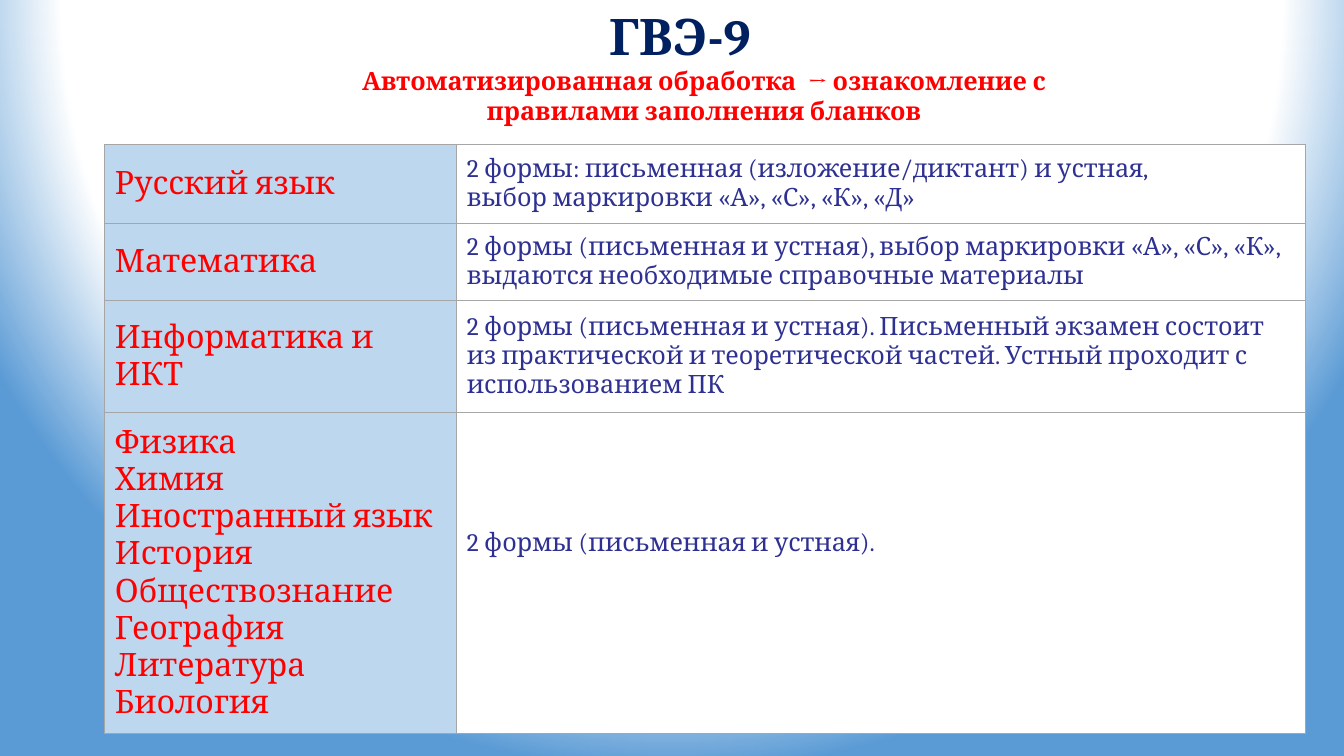
from dataclasses import dataclass

from lxml import etree
from pptx import Presentation
from pptx import util as u
from pptx.dml.color import RGBColor
from pptx.enum import text
from pptx.oxml import parse_xml
from pptx.oxml.ns import qn

NS = 'xmlns:a="http://schemas.openxmlformats.org/drawingml/2006/main"'


@dataclass(frozen=True)
class Theme:
    font: str = "Cambria"
    navy: str = "002060"
    red: str = "FF0000"
    indigo: str = "2E3192"
    pale_blue: str = "BDD7EE"
    white: str = "FFFFFF"
    sky: str = "5B9BD5"
    border: str = "A6A6A6"
    title_size: int = 36
    subject_size: int = 23
    body_size: int = 18


theme = Theme()


def write(frame, lines, size, color, bold=False, align=text.PP_ALIGN.LEFT):
    frame.word_wrap = True
    frame.text = "\n".join(lines)
    for para in frame.paragraphs:
        para.alignment = align
        for span in para.runs:
            span.font.name = theme.font
            span.font.size = u.Pt(size)
            span.font.bold = bold
            span.font.color.rgb = RGBColor.from_string(color)


def add_borders(cell):
    properties = cell._tc.get_or_add_tcPr()
    for side in ("lnL", "lnR", "lnT", "lnB"):
        properties.append(parse_xml(
            f'<a:{side} {NS} w="12700"><a:solidFill>'
            f'<a:srgbClr val="{theme.border}"/></a:solidFill></a:{side}>'))


deck = Presentation()
deck.slide_width, deck.slide_height = u.Inches(13.33), u.Inches(7.5)
page = deck.slides.add_slide(deck.slide_layouts[6])

# Background: white glow fading to blue at the edges
page.background.fill.solid()
solid = next(page.element.iter(qn("p:bgPr"))).find(qn("a:solidFill"))
gradient = etree.Element(qn("a:gradFill"), rotWithShape="1")
stops = etree.SubElement(gradient, qn("a:gsLst"))
for percent, color in ((0, theme.white), (79, theme.white), (100, theme.sky)):
    stop = etree.SubElement(stops, qn("a:gs"), pos=str(percent * 1000))
    etree.SubElement(stop, qn("a:srgbClr"), val=color)
circle = etree.SubElement(gradient, qn("a:path"), {"path": "circle"})
etree.SubElement(circle, qn("a:fillToRect"),
                 l="50000", t="-80000", r="50000", b="180000")
solid.getparent().replace(solid, gradient)

# Title and subtitle
headings = [
    ((2.57, 0, 8.35, 0.71), "ГВЭ-9", theme.title_size, theme.navy),
    ((2.73, 0.6, 8.51, 0.71),
     "Автоматизированная обработка  → ознакомление с правилами заполнения бланков",
     theme.body_size, theme.red),
]
for place, heading, size, color in headings:
    box = page.shapes.add_textbox(*map(u.Inches, place))
    write(box.text_frame, [heading], size, color, True, text.PP_ALIGN.CENTER)

# Table of subjects: row height, subjects, exam forms
rows = [
    (0.79, ["Русский язык"],
     ["2 формы: письменная (изложение/диктант) и устная,",
      "выбор маркировки «А», «С», «К», «Д»"]),
    (0.76, ["Математика"],
     ["2 формы (письменная и устная), выбор маркировки «А», «С», «К», "
      "выдаются необходимые справочные материалы"]),
    (1.11, ["Информатика и ИКТ"],
     ["2 формы (письменная и устная). Письменный экзамен состоит из "
      "практической и теоретической частей. Устный проходит с "
      "использованием ПК"]),
    (3.19, ["Физика", "Химия", "Иностранный язык", "История",
            "Обществознание", "География", "Литература", "Биология"],
     ["2 формы (письменная и устная)."]),
]
columns = [
    (3.49, theme.subject_size, theme.red, theme.pale_blue),
    (8.42, theme.body_size, theme.indigo, theme.white),
]
table = page.shapes.add_table(
    len(rows), len(columns), u.Inches(1.04), u.Inches(1.43),
    u.Inches(11.91), u.Inches(5.85)).table
table.first_row = table.horz_banding = False
for c, (width, size, color, fill) in enumerate(columns):
    table.columns[c].width = u.Inches(width)
    for r, (height, *contents) in enumerate(rows):
        table.rows[r].height = u.Inches(height)
        cell = table.cell(r, c)
        cell.margin_left = cell.margin_right = u.Inches(0.1)
        cell.margin_top = cell.margin_bottom = u.Inches(0.06)
        cell.vertical_anchor = text.MSO_ANCHOR.MIDDLE
        write(cell.text_frame, contents[c], size, color)
        add_borders(cell)
        cell.fill.solid()
        cell.fill.fore_color.rgb = RGBColor.from_string(fill)

# The last answer sits above the middle of its tall cell
table.cell(len(rows) - 1, 1).margin_bottom = u.Inches(0.64)

deck.save("out.pptx")
